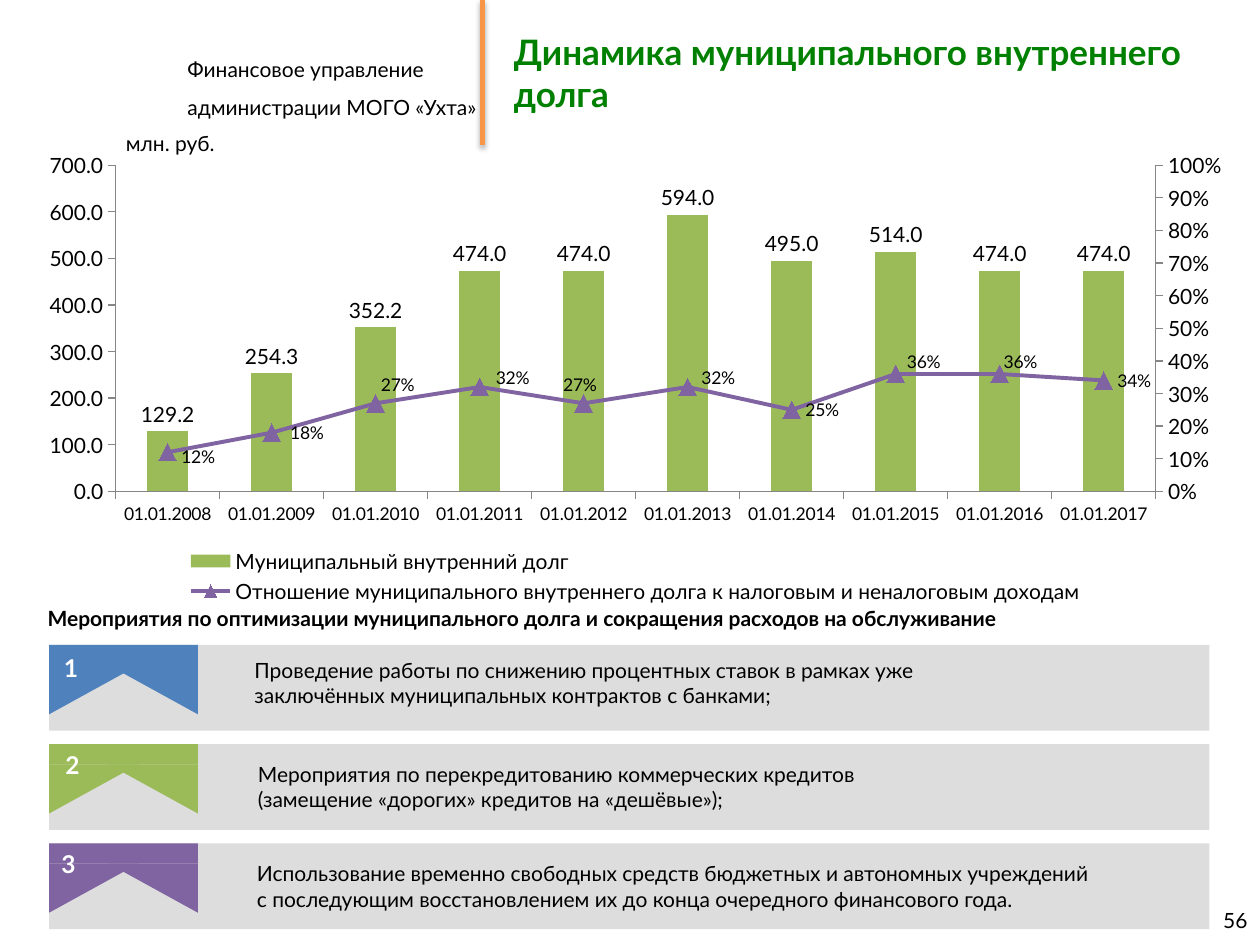
from copy import deepcopy

from lxml.etree import SubElement
from pptx import Presentation
from pptx.chart.data import CategoryChartData
from pptx.dml.color import RGBColor
from pptx.enum.chart import (XL_CHART_TYPE, XL_LABEL_POSITION, XL_LEGEND_POSITION,
                             XL_MARKER_STYLE, XL_TICK_MARK)
from pptx.enum.shapes import MSO_CONNECTOR, MSO_SHAPE
from pptx.enum.text import MSO_ANCHOR, PP_ALIGN
from pptx.oxml import parse_xml
from pptx.oxml.ns import nsdecls, qn
from pptx.util import Cm, Pt

FONT = "Lato"
GREEN, PURPLE, BLUE = "9BBB59", "8064A2", "4F81BD"

DEPARTMENT = ["Финансовое управление", "администрации МОГО «Ухта»"]
TITLE = "Динамика муниципального внутреннего долга"
HEADING = "Мероприятия по оптимизации муниципального долга и сокращения расходов на обслуживание"
DEBT_NAME = "Муниципальный внутренний долг"
RATIO_NAME = "Отношение муниципального внутреннего долга к налоговым и неналоговым доходам"
DATES = [f"01.01.{year}" for year in range(2008, 2018)]
DEBT = [129.2, 254.3, 352.2, 474, 474, 594, 495, 514, 474, 474]
RATIO = [0.12, 0.18, 0.27, 0.32, 0.27, 0.32, 0.25, 0.36, 0.36, 0.34]
# Shift of ratio labels from the right of their points, as shares of the chart
LABEL_SHIFTS = {0: (0, 0.01), 1: (0.004, 0), 2: (-0.007, -0.04), 3: (0.002, -0.02),
                4: (-0.028, -0.04), 5: (0, -0.02), 7: (-0.002, -0.026), 8: (-0.008, -0.026)}
# Colour, number offset, text offset (both from the band's corner, cm), text width, lines
MEASURES = [
    (BLUE, (0.05, 0.03), (3.89, 0.13), 14.02,
     ["Проведение работы по снижению процентных ставок в рамках уже",
      "заключённых муниципальных контрактов с банками;"]),
    (GREEN, (0.08, 0), (3.96, 0.22), 12.65,
     ["Мероприятия по перекредитованию коммерческих кредитов",
      "(замещение «дорогих» кредитов на «дешёвые»);"]),
    (PURPLE, (0, 0), (3.94, 0.23), 17.4,
     ["Использование временно свободных средств бюджетных и автономных учреждений",
      "с последующим восстановлением их до конца очередного финансового года."]),
]
BAND_LEFT, BAND_TOP, BAND_WIDTH, BAND_HEIGHT, BAND_PITCH = 0.99, 13, 23.39, 1.73, 2
FLAG_WIDTH, FLAG_TOP_HEIGHT, TAIL_WIDTH, TAIL_HEIGHT = 3, 0.41, 1.8, 0.99


def color(value):
    return RGBColor.from_string(value)


def style(font, size, value="000000", bold=False):
    font.name, font.size, font.bold = FONT, Pt(size), bold
    font.color.rgb = color(value)


def add_text(slide, box, lines, size=12, value="000000", bold=False,
             align=PP_ALIGN.LEFT, anchor=MSO_ANCHOR.TOP, spacing=None):
    frame = slide.shapes.add_textbox(*map(Cm, box)).text_frame
    frame.word_wrap = True
    frame.vertical_anchor = anchor
    frame.text = "\n".join(lines)
    for paragraph in frame.paragraphs:
        paragraph.alignment = align
        paragraph.line_spacing = spacing
        style(paragraph.font, size, value, bold)


def add_filled(shapes, kind, box, fill, rotation=0):
    shape = shapes.add_shape(kind, *map(Cm, box))
    shape.shadow.inherit = False
    shape.fill.solid()
    shape.fill.fore_color.rgb = color(fill)
    shape.line.fill.background()
    shape.rotation = rotation


def add_flag(slide, left, top, fill):
    """Ribbon with a notched lower edge: a bar and two triangular tails."""
    shapes = slide.shapes.add_group_shape().shapes
    tail_top = top + FLAG_TOP_HEIGHT
    turn = (TAIL_WIDTH - TAIL_HEIGHT) / 2
    add_filled(shapes, MSO_SHAPE.RECTANGLE, (left, top, FLAG_WIDTH, FLAG_TOP_HEIGHT), fill)
    add_filled(shapes, MSO_SHAPE.RIGHT_TRIANGLE,
               (left + turn, tail_top - turn, TAIL_HEIGHT, TAIL_WIDTH), fill, 90)
    add_filled(shapes, MSO_SHAPE.RIGHT_TRIANGLE,
               (left + FLAG_WIDTH - TAIL_WIDTH, tail_top, TAIL_WIDTH, TAIL_HEIGHT), fill, 180)


def add_divider(slide):
    line = slide.shapes.add_connector(MSO_CONNECTOR.STRAIGHT, Cm(9.73), 0, Cm(9.73), Cm(2.92))
    line.line.color.rgb = color("F79646")
    line.line.width = Pt(3)
    line._element.spPr.append(parse_xml(
        f'<a:effectLst {nsdecls("a")}><a:outerShdw blurRad="40000" dist="23000" dir="5400000" '
        'rotWithShape="0"><a:srgbClr val="000000"><a:alpha val="35000"/></a:srgbClr>'
        '</a:outerShdw></a:effectLst>'))


def remove_children(parent, tag):
    for child in parent.findall(qn(tag)):
        parent.remove(child)


def manual_layout(x, y, w=None, h=None, inner=False):
    layout = parse_xml(f'<c:layout {nsdecls("c")}><c:manualLayout/></c:layout>')
    settings = [("xMode", "edge"), ("yMode", "edge")] if w else []
    if inner:
        settings.insert(0, ("layoutTarget", "inner"))
    settings += [("x", x), ("y", y)] + ([("w", w), ("h", h)] if w else [])
    for name, value in settings:
        SubElement(layout[0], qn(f"c:{name}")).set("val", str(value))
    return layout


def style_axis(axis, size):
    axis.has_major_gridlines = False
    axis.major_tick_mark = XL_TICK_MARK.OUTSIDE
    axis.minor_tick_mark = XL_TICK_MARK.NONE
    axis.format.line.color.rgb = color("868686")
    style(axis.tick_labels.font, size)


def set_values(element, **values):
    for name, value in values.items():
        element.find(f".//{qn('c:' + name)}").set("val", value)


def move_to_right_axis(chart):
    """Turn the second series into a line on its own percentage axis."""
    plot_area = chart._chartSpace.chart.plotArea
    bars = plot_area.find(qn("c:barChart"))
    ratio = bars.findall(qn("c:ser"))[1]
    remove_children(ratio, "c:invertIfNegative")
    lines = parse_xml(
        f'<c:lineChart {nsdecls("c")}><c:grouping val="standard"/><c:varyColors val="0"/>'
        '<c:marker val="1"/><c:axId val="5001"/><c:axId val="5002"/></c:lineChart>')
    lines.insert(2, ratio)
    bars.addnext(lines)
    right = deepcopy(plot_area.find(qn("c:valAx")))
    hidden = deepcopy(plot_area.find(qn("c:catAx")))
    set_values(right, axId="5002", crossAx="5001", axPos="r", crosses="max",
               max="1", majorUnit="0.1")
    right.find(qn("c:numFmt")).set("formatCode", "0%")
    set_values(hidden, axId="5001", crossAx="5002", delete="1")
    plot_area.findall(qn("c:valAx"))[-1].addnext(right)
    right.addnext(hidden)


def show_labels(labels, size, number_format, position):
    labels.show_value = True
    labels.number_format = number_format
    labels.number_format_is_linked = False
    labels.position = position
    style(labels.font, size)


def add_debt_chart(slide):
    data = CategoryChartData()
    data.categories = DATES
    data.add_series(DEBT_NAME, DEBT, "0.0")
    data.add_series(RATIO_NAME, RATIO, "0%")
    chart = slide.shapes.add_chart(XL_CHART_TYPE.COLUMN_CLUSTERED, Cm(0.51), Cm(2.9),
                                   Cm(24.61), Cm(9.37), data).chart
    chart.has_title = False
    style(chart.font, 18)
    style_axis(chart.category_axis, 10)
    axis = chart.value_axis
    style_axis(axis, 12)
    axis.minimum_scale, axis.maximum_scale, axis.major_unit = 0, 700, 100
    axis.tick_labels.number_format = "0.0"
    axis.tick_labels.number_format_is_linked = False
    move_to_right_axis(chart)

    bars, lines = chart.plots
    bars.gap_width = 150
    bars.vary_by_categories = False
    debt, ratio = bars.series[0], lines.series[0]
    debt.format.fill.solid()
    debt.format.fill.fore_color.rgb = color(GREEN)
    show_labels(debt.data_labels, 12, "0.0", XL_LABEL_POSITION.OUTSIDE_END)

    ratio.smooth = False
    ratio.format.line.color.rgb = color(PURPLE)
    ratio.format.line.width = Pt(2.25)
    ratio.marker.style, ratio.marker.size = XL_MARKER_STYLE.TRIANGLE, 10
    ratio.marker.format.fill.solid()
    ratio.marker.format.fill.fore_color.rgb = color(PURPLE)
    ratio.marker.format.line.color.rgb = color(PURPLE)
    show_labels(ratio.data_labels, 10, "0%", XL_LABEL_POSITION.RIGHT)
    for index, shift in LABEL_SHIFTS.items():
        label = ratio.points[index].data_label
        label.position = XL_LABEL_POSITION.RIGHT
        style(label.font, 10)
        label_element = ratio._element.xpath(f"c:dLbls/c:dLbl[c:idx/@val='{index}']")[0]
        label_element.find(qn("c:idx")).addnext(manual_layout(*shift))

    chart.has_legend = True
    chart.legend.position = XL_LEGEND_POSITION.BOTTOM
    chart.legend.include_in_layout = False
    style(chart.legend.font, 12)
    legend = chart.legend._element
    remove_children(legend, "c:layout")
    legend.find(qn("c:legendPos")).addnext(manual_layout(0.13, 0.86, 0.74, 0.14))
    plot_area = chart._chartSpace.chart.plotArea
    remove_children(plot_area, "c:layout")
    plot_area.insert(0, manual_layout(0.074, 0.046, 0.852, 0.702, inner=True))


def main():
    presentation = Presentation()
    presentation.slide_width, presentation.slide_height = Cm(25.4), Cm(19.05)
    slide = presentation.slides.add_slide(presentation.slide_layouts[6])
    add_text(slide, (3.53, 0.76, 6.35, 1.68), DEPARTMENT, spacing=1.5)
    add_divider(slide)
    add_text(slide, (10.11, 0, 15.29, 2.92), [TITLE], 20, "008000", True, anchor=MSO_ANCHOR.MIDDLE)
    add_text(slide, (19.48, 18.03, 5.92, 1.02), ["56"], align=PP_ALIGN.RIGHT,
             anchor=MSO_ANCHOR.MIDDLE)
    add_debt_chart(slide)
    add_text(slide, (2.29, 2.51, 2.6, 0.76), ["млн. руб."])
    add_text(slide, (0.71, 12.09, 22.25, 0.76), [HEADING], bold=True)
    for index, (fill, number_at, text_at, width, lines) in enumerate(MEASURES):
        top = BAND_TOP + index * BAND_PITCH
        add_filled(slide.shapes, MSO_SHAPE.RECTANGLE,
                   (BAND_LEFT, top, BAND_WIDTH, BAND_HEIGHT), "DDDDDD")
        add_flag(slide, BAND_LEFT, top, fill)
        add_text(slide, (BAND_LEFT + text_at[0], top + text_at[1], width, 1.27), lines,
                 align=PP_ALIGN.JUSTIFY)
        add_text(slide, (BAND_LEFT + number_at[0], top + number_at[1], 0.84, 0.86),
                 [str(index + 1)], 14, "FFFFFF", True)
    presentation.save("out.pptx")


if __name__ == "__main__":
    main()
